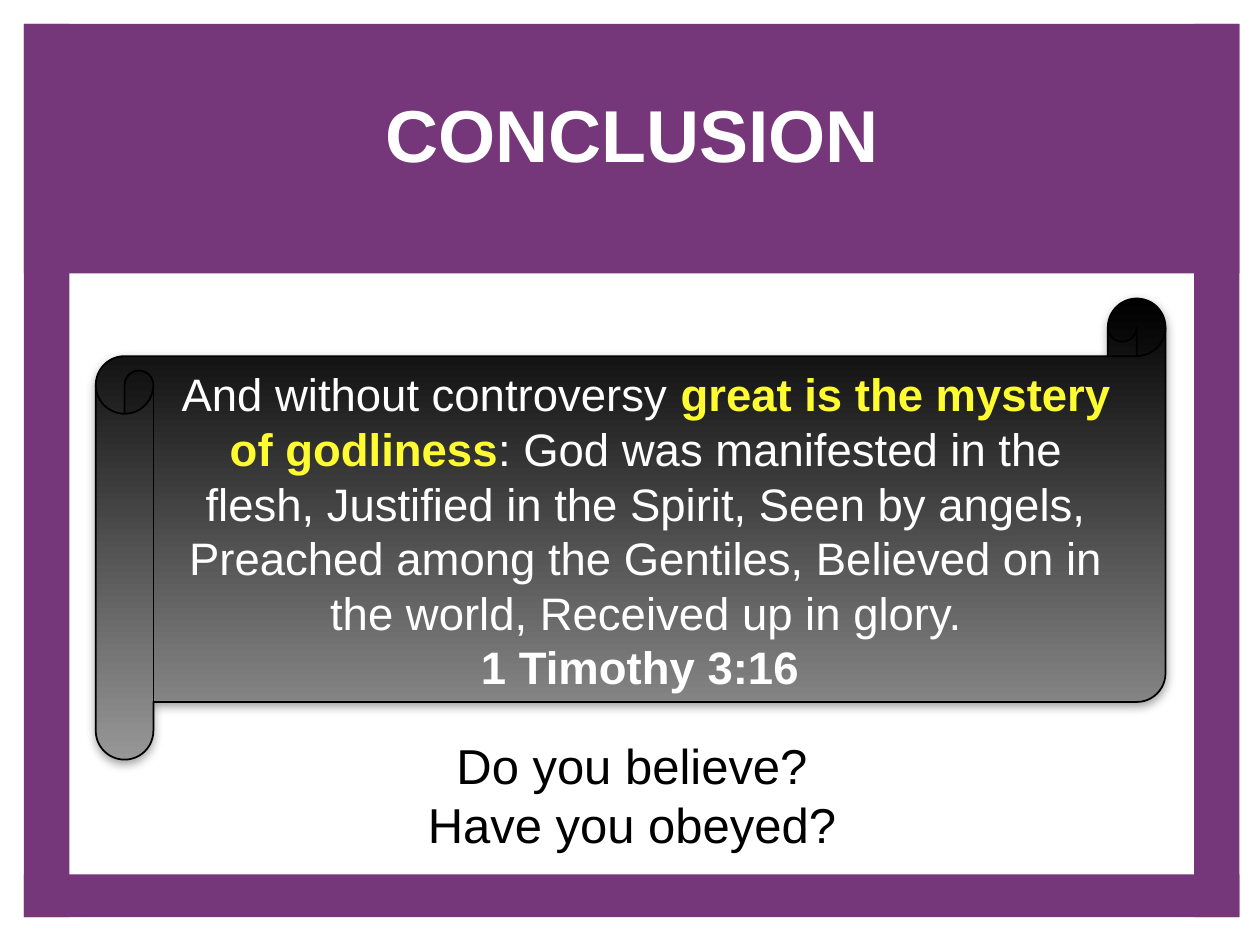
from lxml import etree
from pptx import Presentation
from pptx.dml.color import RGBColor
from pptx.enum.shapes import MSO_SHAPE
from pptx.enum.text import MSO_ANCHOR, PP_ALIGN
from pptx.oxml.ns import qn
from pptx.util import Pt

RECTANGLE = MSO_SHAPE.RECTANGLE
SCROLL = MSO_SHAPE.HORIZONTAL_SCROLL
TOP = MSO_ANCHOR.TOP
CENTER = PP_ALIGN.CENTER

TITLE_ONLY = 5
FONT = "Arial"
COLORS = {
    "purple": "75367A",
    "white": "FFFFFF",
    "black": "000000",
    "gray": "979797",
    "shadow": "808080",
    "yellow": "FEFB31",
}


def color(name):
    return RGBColor.from_string(COLORS[name])


def points(box):
    return [Pt(length) for length in box]


def add_run(paragraph, text, size=26, fill="white", bold=False):
    run = paragraph.add_run()
    run.text = text
    run.font.name = FONT
    run.font.size = Pt(size)
    run.font.bold = bold
    run.font.color.rgb = color(fill)


def write_paragraphs(shape, paragraphs):
    frame = shape.text_frame
    frame.word_wrap = True
    frame.vertical_anchor = TOP
    for index, runs in enumerate(paragraphs):
        paragraph = frame.add_paragraph() if index else frame.paragraphs[0]
        paragraph.alignment = CENTER
        for text, options in runs:
            add_run(paragraph, text, **options)


def add_frame(slide, box):
    left, top, width, height = box
    side, header, footer = 26, 142.5, 24.5
    bands = [
        (left, top, side, height),
        (left + width - side, top, side, height),
        (left, top, width, header),
        (left, top + height - footer, width, footer),
    ]
    for band in bands:
        shape = slide.shapes.add_shape(RECTANGLE, *points(band))
        shape.shadow.inherit = False
        shape.fill.solid()
        shape.fill.fore_color.rgb = color("purple")
        shape.line.fill.background()


def place_title(slide, box, text):
    title = slide.shapes.title
    slide.shapes._spTree.append(title._element)
    title.left, title.top, title.width, title.height = points(box)
    write_paragraphs(title, [[(text, {"size": 42, "bold": True})]])


def add_shadow(shape, blur, distance):
    shape.shadow.inherit = False
    effects = shape._element.spPr.find(qn("a:effectLst"))
    shadow = etree.SubElement(
        effects, qn("a:outerShdw"), blurRad=str(Pt(blur)), dist=str(Pt(distance)),
        dir="5400000", rotWithShape="0",
    )
    tone = etree.SubElement(shadow, qn("a:srgbClr"), val=COLORS["shadow"])
    etree.SubElement(tone, qn("a:alpha"), val="75000")


def add_verse(slide, box, paragraphs):
    left, top, width, height = box
    scroll = slide.shapes.add_shape(SCROLL, *points(box))
    scroll.fill.gradient()
    scroll.fill.gradient_angle = 270
    for stop, name in zip(scroll.fill.gradient_stops, ("black", "gray")):
        stop.color.rgb = color(name)
    scroll.line.color.rgb = color("black")
    scroll.line.width = Pt(1)
    add_shadow(scroll, blur=5, distance=2)
    text_box = (left + 35.3, top + 35.3, width - 52.6, height - 67)
    verse = slide.shapes.add_textbox(*points(text_box))
    write_paragraphs(verse, paragraphs)


def add_questions(slide, box, questions):
    shape = slide.shapes.add_textbox(*points(box))
    options = {"size": 28, "fill": "black"}
    write_paragraphs(shape, [[(question, options)] for question in questions])


def main():
    presentation = Presentation()
    presentation.slide_width = Pt(720)
    presentation.slide_height = Pt(540)
    slide = presentation.slides.add_slide(presentation.slide_layouts[TITLE_ONLY])

    add_frame(slide, (13.7, 13.7, 694.6, 510.4))
    place_title(slide, (15, 47.5, 692.6, 68.4), "CONCLUSION")
    add_verse(slide, (54.7, 170.6, 611.3, 263.5), [
        [
            ("And without controversy ", {}),
            ("great is the mystery of godliness", {"fill": "yellow", "bold": True}),
            (": God was manifested in the flesh, Justified in the Spirit, "
             "Seen by angels, Preached among the Gentiles, Believed on in "
             "the world, Received up in glory.", {}),
        ],
        [("1 Timothy 3:16 ", {"bold": True})],
    ])
    add_questions(slide, (39.6, 416.9, 643, 74.9),
                  ["Do you believe?", "Have you obeyed?"])
    presentation.save("out.pptx")


if __name__ == "__main__":
    main()
